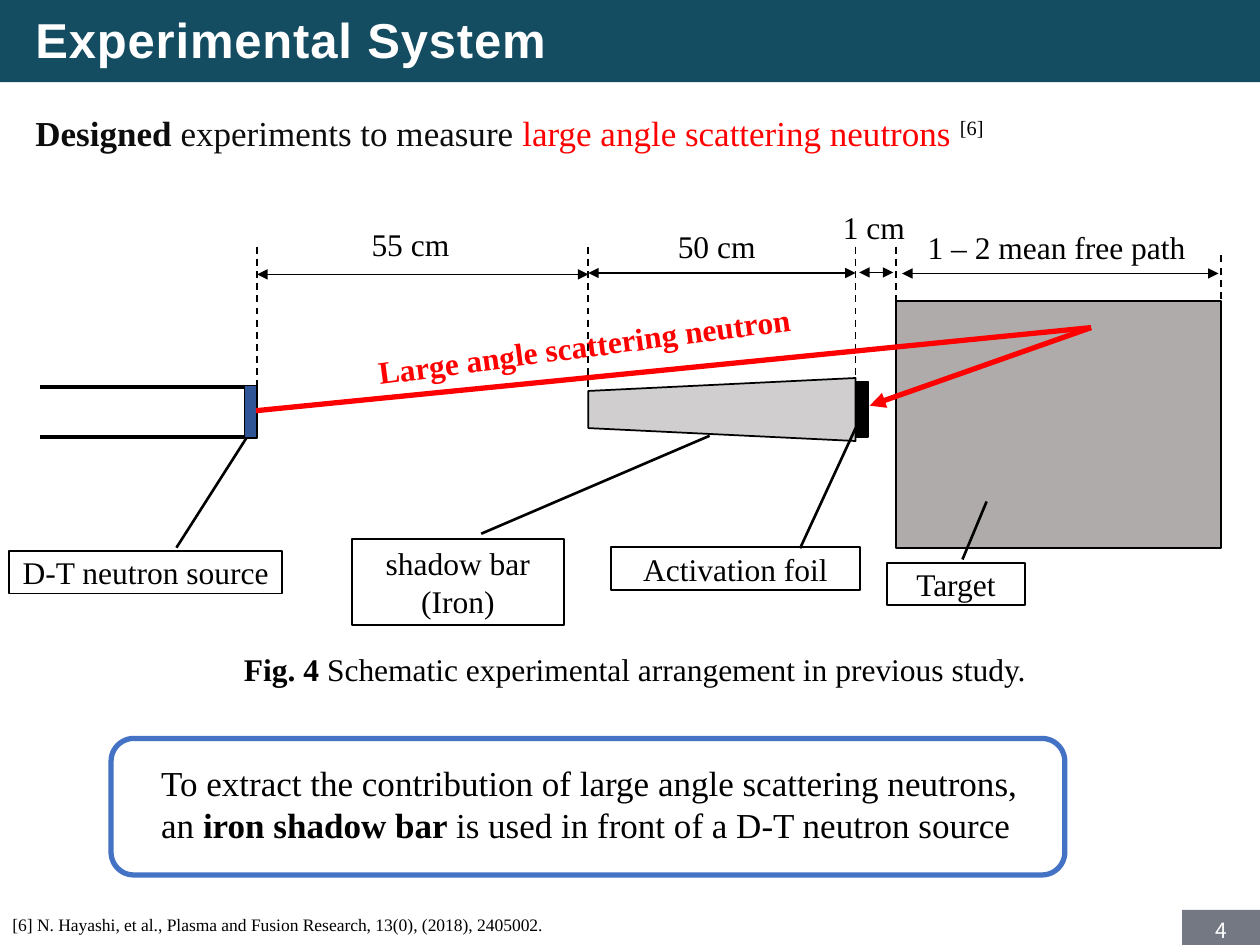
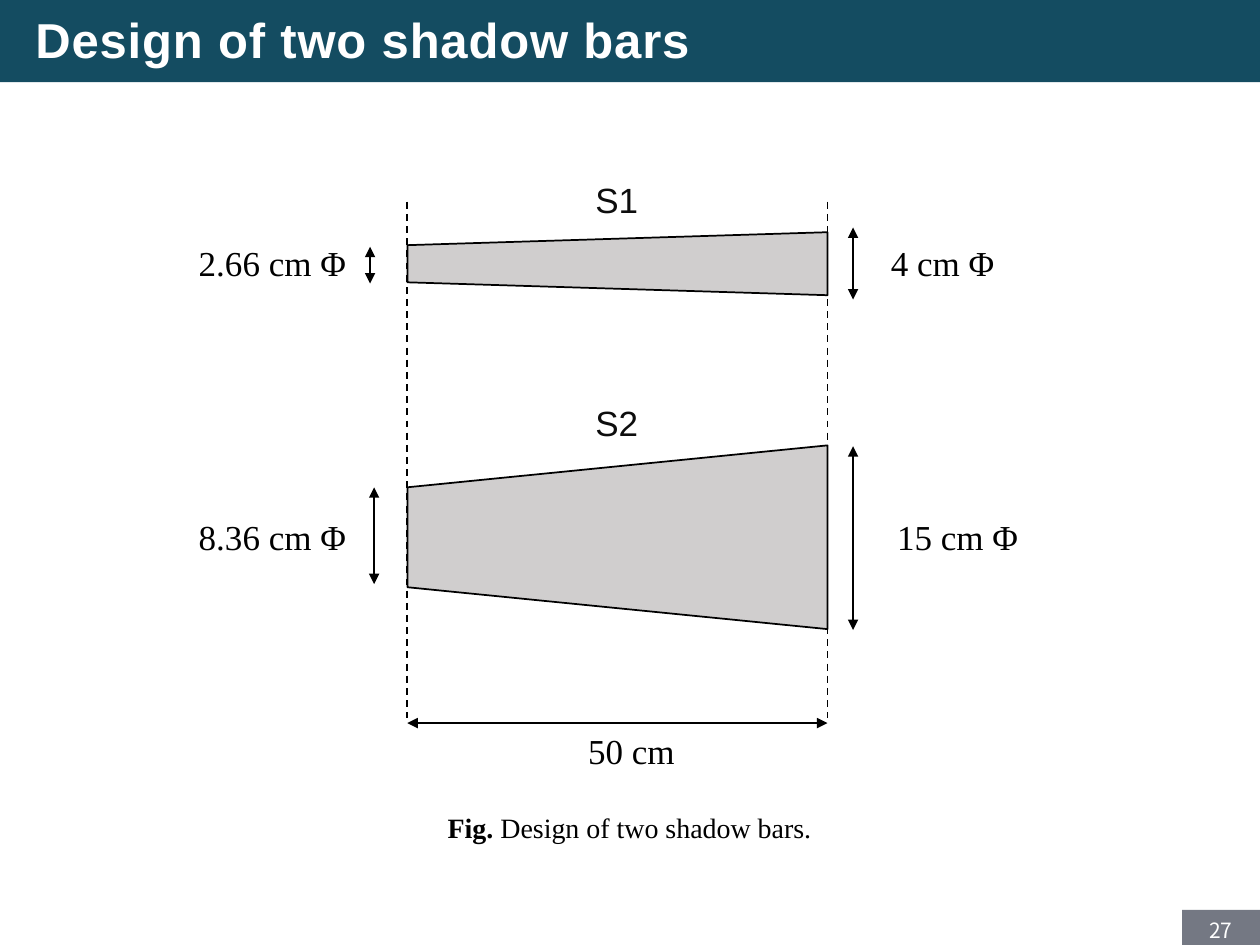
"""Build two slides on shadow bars for a neutron scattering experiment."""
from lxml import etree
from pptx import Presentation
from pptx.dml.color import RGBColor
from pptx.enum.dml import MSO_LINE
from pptx.enum.shapes import MSO_CONNECTOR, MSO_SHAPE
from pptx.enum.text import MSO_ANCHOR, MSO_AUTO_SIZE, PP_ALIGN
from pptx.oxml.ns import qn
from pptx.util import Pt

RECT, ROUND = MSO_SHAPE.RECTANGLE, MSO_SHAPE.ROUNDED_RECTANGLE
TAPER, PROCESS = MSO_SHAPE.TRAPEZOID, MSO_SHAPE.FLOWCHART_PROCESS
STRAIGHT, DASH = MSO_CONNECTOR.STRAIGHT, MSO_LINE.DASH
LEFT, CENTER = PP_ALIGN.LEFT, PP_ALIGN.CENTER
TOP, MIDDLE = MSO_ANCHOR.TOP, MSO_ANCHOR.MIDDLE
FIXED = MSO_AUTO_SIZE.NONE

SERIF, SANS, CJK = "Times New Roman", "Arial", "Noto Sans CJK JP"
BLACK, WHITE, INK, RED = "000000", "FFFFFF", "0D0D0D", "FF0000"
TEAL, SLATE, NAVY, BLUE = "144C61", "747883", "2F5597", "4472C4"
IRON, STONE = "D0CECE", "AFABAB"


def color(text):
    """Return the colour for a hex string."""
    return RGBColor.from_string(text)


def place(shape, box):
    """Move and size a shape to a box in points."""
    shape.left, shape.top, shape.width, shape.height = map(Pt, box)


def style(run, font, size, ink, bold=False):
    """Format one run of text."""
    run.font.name, run.font.size, run.font.bold = font, Pt(size), bold
    run.font.color.rgb = color(ink)


def setup(frame, anchor=TOP):
    """Make a text frame wrap at a fixed size."""
    frame.word_wrap, frame.auto_size = True, FIXED
    frame.vertical_anchor = anchor


def write(frame, text, size=18, font=SERIF, ink=BLACK, align=LEFT, bold=False):
    """Fill a frame with text of a single style."""
    frame.text = text
    for para in frame.paragraphs:
        para.alignment = align
        for run in para.runs:
            style(run, font, size, ink, bold)


def mix(para, parts, size, align=LEFT):
    """Fill a paragraph with (text, ink, bold) parts."""
    para.alignment = align
    for text, ink, bold in parts:
        run = para.add_run()
        run.text = text
        style(run, SERIF, size, ink, bold)


def blank(slide, box, anchor=TOP):
    """Add an empty text box and return its frame."""
    frame = slide.shapes.add_textbox(*map(Pt, box)).text_frame
    setup(frame, anchor)
    return frame


def note(slide, text, box, **looks):
    """Add a text box of a single style."""
    write(blank(slide, box), text, **looks)


def block(slide, kind, box, fill=None, edge=None, width=1):
    """Add a preset shape with an optional fill and edge."""
    shape = slide.shapes.add_shape(kind, *map(Pt, box))
    shape.shadow.inherit = False
    if fill:
        shape.fill.solid()
        shape.fill.fore_color.rgb = color(fill)
    else:
        shape.fill.background()
    if edge:
        shape.line.color.rgb = color(edge)
        shape.line.width = Pt(width)
    else:
        shape.line.fill.background()
    return shape


def label(slide, text, box):
    """Add a framed label with centred text."""
    frame = block(slide, RECT, box, edge=BLACK).text_frame
    setup(frame, MIDDLE)
    frame.margin_left = frame.margin_right = 0
    frame.margin_top = frame.margin_bottom = 0
    write(frame, text, align=CENTER)


def bar(slide, left, top, width, height, ratio):
    """Add a shadow bar that narrows to the left."""
    box = (left + (width - height) / 2, top + (height - width) / 2,
           height, width)
    shape = block(slide, TAPER, box, IRON, BLACK)
    shape.adjustments[0] = ratio
    shape.rotation = 270


def line(slide, ends, width=1, ink=BLACK, dash=False, heads=()):
    """Add a straight line with optional dashes and arrowheads."""
    link = slide.shapes.add_connector(STRAIGHT, *map(Pt, ends))
    link.line.color.rgb = color(ink)
    link.line.width = Pt(width)
    if dash:
        link.line.dash_style = DASH
    for head in heads:
        etree.SubElement(link.line._get_or_add_ln(), qn("a:" + head),
                         type="triangle")
    etree.SubElement(link.element.spPr, qn("a:effectLst"))


def span(slide, *ends):
    """Add a dimension line with two arrowheads."""
    line(slide, ends, heads=("headEnd", "tailEnd"))


def bands(deck, slide):
    """Put the title band and page tab on the slide master."""
    tree = deck.slide_master.element.cSld.spTree
    parts = [((675.5, 520, 44.5, 20), SLATE), ((0, 0, 720, 47), TEAL)]
    for place_id, (box, fill) in enumerate(parts, 2):
        item = block(slide, RECT, box, fill).element
        item.nvSpPr.cNvPr.set("id", str(100 + place_id))
        tree.insert(place_id, item)


def head(slide, title, page):
    """Set the title and page number of a slide."""
    shape = slide.shapes.title
    place(shape, (13, 0, 565, 45))
    setup(shape.text_frame, MIDDLE)
    write(shape.text_frame, title, 28, SANS, WHITE, bold=True)
    run = shape.text_frame.paragraphs[0].runs[0]
    run._r.get_or_add_rPr().set("spc", "50")
    write(blank(slide, (675.5, 520.5, 44.5, 22), MIDDLE), page, 12, CJK,
          WHITE, CENTER)


def lead(slide):
    """Fill the body placeholder with the opening statement."""
    body = slide.placeholders[1]
    place(body, (13, 59, 693, 33))
    setup(body.text_frame, MIDDLE)
    para = body.text_frame.paragraphs[0]
    props = para._p.get_or_add_pPr()
    props.set("marL", "0")
    props.set("indent", "0")
    etree.SubElement(props, qn("a:buNone"))
    para.space_before = Pt(0)
    mix(para, [("Designed", INK, True),
               (" experiments to measure ", INK, False),
               ("large angle scattering neutrons ", RED, False),
               ("[6]", BLACK, False)], 20)
    para.runs[-1]._r.get_or_add_rPr().set("baseline", "30000")


def rig(slide):
    """Draw the source, shadow bar, foil and target with their sizes."""
    source, near, foil, target, end = 147, 336.2, 488.9, 512, 697.7
    for y in (221, 249.8):
        line(slide, (23, y, 139.7, y), 2.25)
    block(slide, RECT, (139.7, 220.3, 7.2, 30), NAVY, BLACK)
    bar(slide, near, 216, foil - near, 36, 0.205)
    block(slide, RECT, (foil, 218, 7.2, 31.7), BLACK, BLACK)
    block(slide, PROCESS, (target, 172, end - target, 141), STONE, BLACK)
    for x in (source, near, foil, target):
        line(slide, (x, 141, x, 222.5), dash=True)
    line(slide, (end, 146, end, 227.5), dash=True)
    span(slide, source, 156.8, near, 156.8)
    span(slide, near, 156, foil, 156)
    span(slide, 491, 155.7, 510.5, 155.7)
    span(slide, 515.5, 156.3, 696.3, 156.3)
    for text, x, y, width in [("55 cm", 205.2, 125, 87),
                              ("50 cm", 380.2, 126, 87),
                              ("1 cm", 474.5, 115.5, 87),
                              ("1 – 2 mean free path", 523, 127, 176)]:
        note(slide, text, (x, y, width, 28))


def system(slide):
    """Build the experimental system slide."""
    head(slide, "Experimental System", "4")
    lead(slide)
    rig(slide)
    note(slide, "Large angle scattering neutron", (173.5, 183, 320.5, 28),
         ink=RED, align=CENTER, bold=True)
    slide.shapes[-1].rotation = 352.5
    for ends in [(100.8, 313, 141, 250), (275, 305, 405.5, 249),
                 (457.2, 313.3, 489, 244.5), (550, 319.7, 563.8, 286.6)]:
        line(slide, ends, 1.5)
    line(slide, (146.3, 234.7, 623.5, 187.2), 3, RED)
    line(slide, (623.5, 187.2, 497, 231.8), 3, RED, heads=["tailEnd"])
    for text, box in [("D-T neutron source", (5.3, 314.7, 156, 24.5)),
                      ("shadow bar\n(Iron)", (201, 308, 121.3, 49)),
                      ("Activation foil", (349.3, 312.7, 142, 24.5)),
                      ("Target", (506.7, 321.7, 79.2, 24.2))]:
        label(slide, text, box)
    caption(slide, "Fig. 4 ",
            "Schematic experimental arrangement in previous study.",
            (123, 368, 480, 29), 18)
    block(slide, ROUND, (63.5, 422, 545, 78), edge=BLUE, width=3)
    frame = blank(slide, (85, 431.5, 505, 55.5))
    write(frame, "To extract the contribution of large angle scattering "
          "neutrons,", 20)
    mix(frame.add_paragraph(), [
        ("an ", BLACK, False), ("iron shadow bar ", BLACK, True),
        ("is used in front of a D-T neutron source", BLACK, False)], 20)
    note(slide, "[6] N. Hayashi, et al., Plasma and Fusion Research, 13(0), "
         "(2018), 2405002.", (0, 518.5, 660, 19.5), size=10)


def caption(slide, tag, text, box, size):
    """Add a centred figure caption with a bold tag."""
    mix(blank(slide, box).paragraphs[0],
        [(tag, BLACK, True), (text, BLACK, False)], size, CENTER)


def design(slide):
    """Build the slide that compares both shadow bars."""
    head(slide, "Design of two shadow bars", "27")
    left, right = 232.8, 472.8
    bars = [("S1", 98.6, 132.7, 36, 0.205,
             ("2.66 cm Φ", 211.5, 141, 162), ("4 cm Φ", 502, 130, 171.2)),
            ("S2", 226, 254.5, 105, 0.228,
             ("8.36 cm Φ", 213.8, 278.5, 333.8),
             ("15 cm Φ", 505.5, 255, 360))]
    for name, high, top, height, ratio, thin, wide in bars:
        bar(slide, left, top, right - left, height, ratio)
        note(slide, name, (324.7, high, 55.5, 31.5), size=20, font=SANS,
             ink=INK, align=CENTER)
        row = top + height / 2 - 16.2
        text, x, start, stop = thin
        span(slide, x, start, x, stop)
        note(slide, text, (106.5, row, 102, 31.5), size=20)
        text, x, start, stop = wide
        span(slide, 487.5, start, 487.5, stop)
        note(slide, text, (x, row, 87, 31.5), size=20)
    for x in (left, right):
        line(slide, (x, 115.3, x, 410.3), dash=True)
    span(slide, left, 413.2, right, 413.2)
    note(slide, "50 cm", (329, 413.2, 87, 31.5), size=20)
    caption(slide, "Fig. ", "Design of two shadow bars.",
            (184.5, 459.5, 350.5, 26.5), 16)


def main():
    """Build and save the deck."""
    deck = Presentation()
    deck.slide_width, deck.slide_height = Pt(720), Pt(540)
    first = deck.slides.add_slide(deck.slide_layouts[1])
    bands(deck, first)
    system(first)
    design(deck.slides.add_slide(deck.slide_layouts[5]))
    deck.save("out.pptx")


if __name__ == "__main__":
    main()
